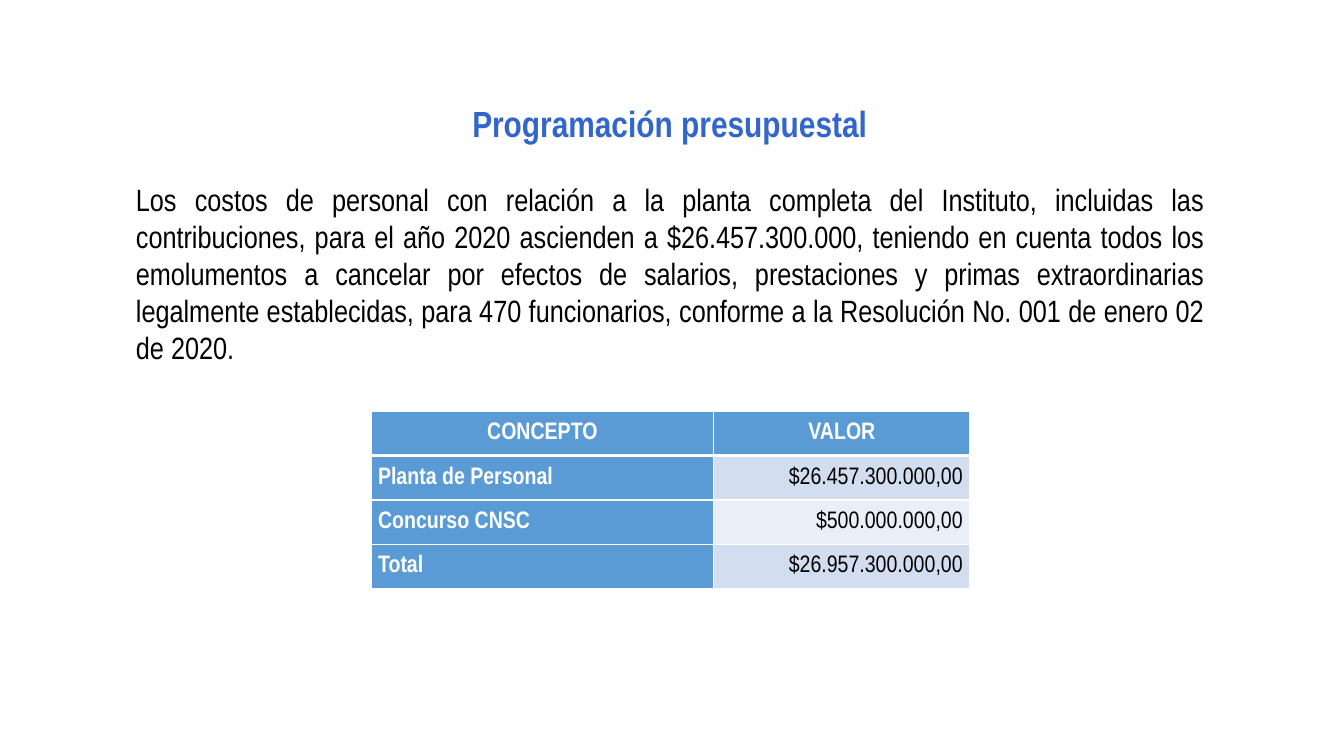
from lxml.etree import SubElement
from pptx import Presentation
from pptx.dml.color import RGBColor
from pptx.enum.text import PP_ALIGN as Align
from pptx.oxml.ns import qn
from pptx.util import Inches, Pt

FONT = "Arial Narrow"
TITLE_BLUE = RGBColor(0x32, 0x66, 0xCC)
HEADER_BLUE = RGBColor(0x5B, 0x9B, 0xD5)
BANDS = (RGBColor(0xD2, 0xDE, 0xEF), RGBColor(0xEA, 0xEF, 0xF7))
WHITE = RGBColor(0xFF, 0xFF, 0xFF)
BLACK = RGBColor(0, 0, 0)

TITLE = "Programación presupuestal"
COSTS = (
    "Los costos de personal con relación a la planta completa del Instituto, "
    "incluidas las contribuciones, para el año 2020 ascienden a $26.457.300.000, "
    "teniendo en cuenta todos los emolumentos a cancelar por efectos de salarios, "
    "prestaciones y primas extraordinarias legalmente establecidas, para 470 "
    "funcionarios, conforme a la Resolución No. 001 de enero 02 de 2020."
)
BUDGET = (
    ("CONCEPTO", "VALOR"),
    ("Planta de Personal", "$26.457.300.000,00"),
    ("Concurso CNSC", "$500.000.000,00"),
    ("Total", "$26.957.300.000,00"),
)
COLUMN_WIDTHS = (Inches(3.4), Inches(2.54))
ROW_HEIGHT = Inches(0.44)


def write(paragraph, text, size, color, bold, align):
    """Fill a paragraph with text in the slide's typeface."""
    paragraph.text = text
    paragraph.alignment = align
    font = paragraph.font
    font.name, font.size, font.bold = FONT, Pt(size), bold
    font.color.rgb = color


def draw_borders(cell, top, bottom):
    """Give a cell white borders, with top and bottom widths in points."""
    properties = cell._tc.get_or_add_tcPr()
    for side, width in (("lnL", 1), ("lnR", 1), ("lnT", top), ("lnB", bottom)):
        line = SubElement(properties, qn(f"a:{side}"), w=str(Pt(width)))
        fill = SubElement(line, qn("a:solidFill"))
        SubElement(fill, qn("a:srgbClr"), val=str(WHITE))


def add_statement(slide, left, top, width, height):
    """Add the heading and the paragraph on staff costs."""
    frame = slide.shapes.add_textbox(left, top, width, height).text_frame
    frame.word_wrap = True
    write(frame.paragraphs[0], TITLE, 26, TITLE_BLUE, True, Align.CENTER)
    costs = frame.add_paragraph()
    write(costs, COSTS, 22, BLACK, False, Align.JUSTIFY)
    costs.space_before = Pt(26)


def fill_budget_cell(cell, text, row, column):
    """Write and style one budget cell according to its place."""
    is_header = row == 0
    is_label = is_header or column == 0
    align = Align.CENTER if is_header else (Align.JUSTIFY, Align.RIGHT)[column]
    cell.margin_left = cell.margin_right = Inches(0.07)
    cell.margin_top = cell.margin_bottom = 0
    paragraph = cell.text_frame.paragraphs[0]
    write(paragraph, text, 17, WHITE if is_label else BLACK, is_label, align)
    paragraph.line_spacing = 1.5
    draw_borders(cell, 3 if row == 1 else 1, 3 if is_header else 1)
    cell.fill.solid()
    cell.fill.fore_color.rgb = HEADER_BLUE if is_label else BANDS[(row - 1) % 2]


def add_budget(slide, left, top):
    """Add the budget table."""
    table = slide.shapes.add_table(
        len(BUDGET), len(COLUMN_WIDTHS), left, top,
        sum(COLUMN_WIDTHS), ROW_HEIGHT * len(BUDGET),
    ).table
    for column, width in zip(table.columns, COLUMN_WIDTHS):
        column.width = width
    for row, entries in enumerate(BUDGET):
        for column, text in enumerate(entries):
            fill_budget_cell(table.cell(row, column), text, row, column)


def main():
    """Build and save the budget slide."""
    deck = Presentation()
    deck.slide_width, deck.slide_height = Inches(13.33), Inches(7.5)
    slide = deck.slides.add_slide(deck.slide_layouts[6])
    add_budget(slide, Inches(3.68), Inches(4.08))
    add_statement(slide, Inches(1.25), Inches(0.95), Inches(10.79), Inches(3.13))
    deck.save("out.pptx")


if __name__ == "__main__":
    main()
